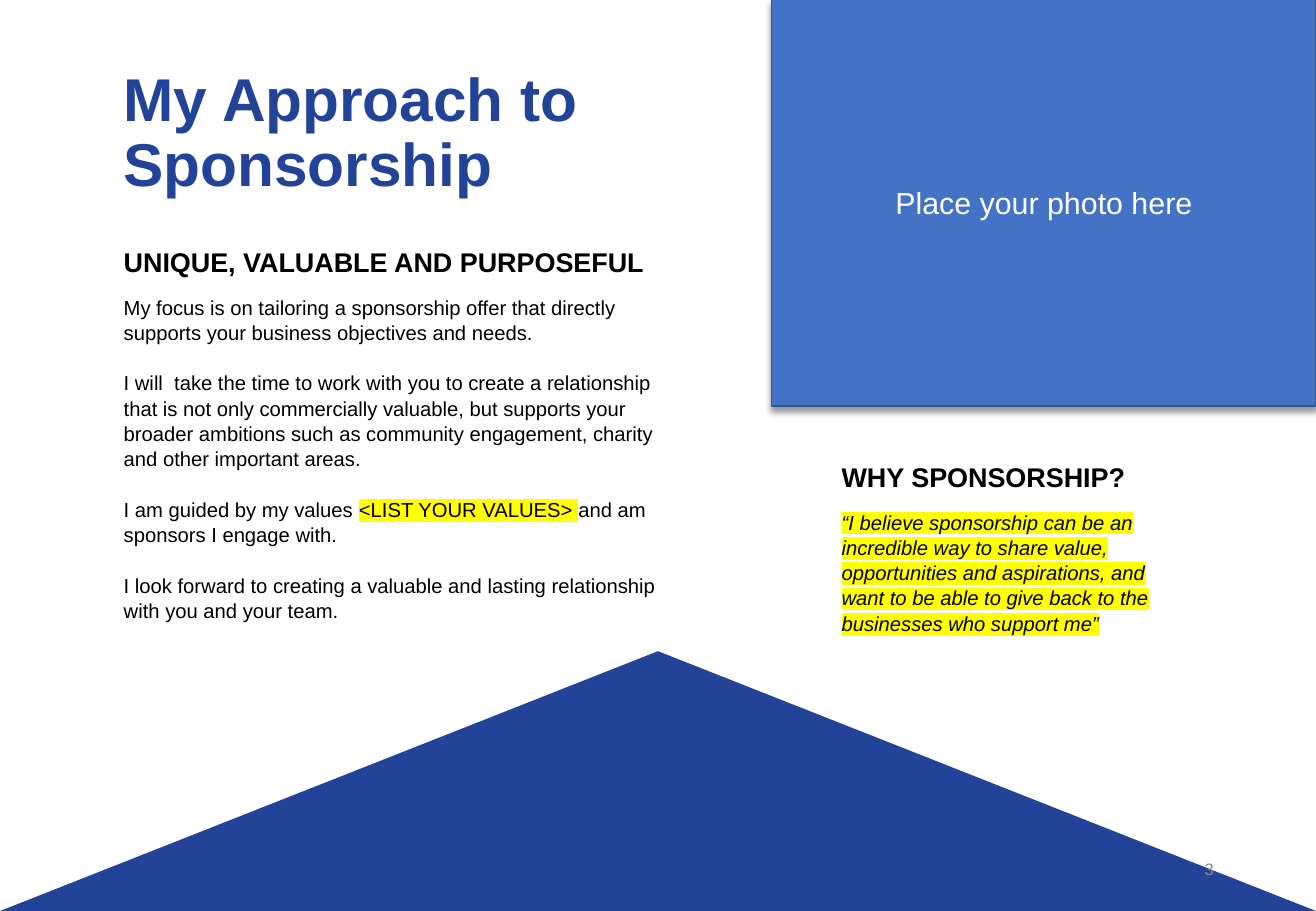
from lxml.etree import SubElement
from pptx import Presentation
from pptx.dml.color import RGBColor
from pptx.enum.shapes import MSO_SHAPE
from pptx.enum.text import MSO_ANCHOR, MSO_AUTO_SIZE, PP_ALIGN
from pptx.oxml import parse_xml
from pptx.oxml.ns import nsdecls, qn
from pptx.util import Pt

WIDE, HIGH = 780, 540
NAVY, BLACK, WHITE, YELLOW = "234398", "000000", "FFFFFF", "FFFF00"
LEFT, RIGHT = 66.24, 491.76

GROW = {"word_wrap": True, "auto_size": MSO_AUTO_SIZE.SHAPE_TO_FIT_TEXT}
MID = {"word_wrap": True, "vertical_anchor": MSO_ANCHOR.MIDDLE}

TITLE = {"size": Pt(35.8), "bold": True}
HEAD = {"size": Pt(16), "bold": True}
BODY = {"size": Pt(12)}
QUOTE = {"size": Pt(12), "italic": True}
NOTE = {"size": Pt(9.8)}
LABEL = {"size": Pt(18)}

TIGHT = {"line_spacing": 0.9, "space_after": Pt(6)}
LOOSE = {"line_spacing": 1.5, "space_before": Pt(6), "space_after": Pt(6)}
FIXED = {"line_spacing": Pt(15)}
GAP = {"line_spacing": Pt(15), "space_before": Pt(15)}

FOCUS = [
    ["My focus is on tailoring a sponsorship offer that directly supports "
     "your business objectives and needs."],
    ["I will  take the time to work with you to create a relationship that is "
     "not only commercially valuable, but supports your broader ambitions "
     "such as community engagement, charity and other important areas."],
    ["I am guided by my values ", ("<LIST YOUR VALUES> ", YELLOW),
     "and am sponsors I engage with."],
    ["I look forward to creating a valuable and lasting relationship with "
     "you and your team."],
]
BELIEF = ("“I believe sponsorship can be an incredible way to share value, "
          "opportunities and aspirations, and want to be able to give back "
          "to the businesses who support me”")


def color(code):
    return RGBColor.from_string(code)


def apply(item, values):
    for name, value in values.items():
        setattr(item, name, value)


def paint(shape, code):
    shape.fill.solid()
    shape.fill.fore_color.rgb = color(code)


def mark(run, code):
    fill = run.font._element.find(qn("a:solidFill"))
    light = parse_xml(f'<a:highlight {nsdecls("a")}/>')
    SubElement(light, qn("a:srgbClr"), val=code)
    fill.addnext(light)


def add_run(para, part, style, code):
    text, light = part if isinstance(part, tuple) else (part, None)
    run = para.add_run()
    run.text = text
    apply(run.font, {**style, "name": "Arial"})
    run.font.color.rgb = color(code)
    if light:
        mark(run, light)


def write(shape, paras, style, code, first, later=None, frame=GROW):
    body = shape.text_frame
    apply(body, frame)
    for order, parts in enumerate(paras):
        para = body.add_paragraph() if order else body.paragraphs[0]
        apply(para, later if order and later else first)
        for part in parts:
            add_run(para, part, style, code)


def add_box(slide, area):
    return slide.shapes.add_textbox(*map(Pt, area))


def add_block(slide, kind, area, code):
    block = slide.shapes.add_shape(kind, *map(Pt, area))
    block.shadow.inherit = False
    paint(block, code)
    block.line.fill.background()
    return block


def add_shade(shape):
    effects = shape._element.spPr.find(qn("a:effectLst"))
    shade = SubElement(effects, qn("a:outerShdw"), blurRad=str(Pt(4)),
                       dist=str(Pt(3)), dir="5400000", rotWithShape="0")
    tint = SubElement(shade, qn("a:srgbClr"), val=BLACK)
    SubElement(tint, qn("a:alpha"), val="40000")


def add_photo(slide):
    photo = add_block(slide, MSO_SHAPE.RECTANGLE, (457.2, -0.5, 323, 241.2), "4472C4")
    photo.line.color.rgb = color("325491")
    photo.line.width = Pt(1)
    add_shade(photo)
    write(photo, [["Place your photo here"]], LABEL, WHITE,
          {"alignment": PP_ALIGN.CENTER}, frame=MID)


def main():
    deck = Presentation()
    apply(deck, {"slide_width": Pt(WIDE), "slide_height": Pt(HIGH)})
    slide = deck.slides.add_slide(deck.slide_layouts[6])

    add_block(slide, MSO_SHAPE.ISOSCELES_TRIANGLE, (0, 386, WIDE, HIGH - 386), NAVY)
    page = add_box(slide, (550.8, 500.4, 175.7, 28.8))
    write(page, [["3"]], NOTE, "8C8C8C", {"alignment": PP_ALIGN.RIGHT}, frame=MID)

    for text, area in (
        ("UNIQUE, VALUABLE AND PURPOSEFUL", (LEFT, 132.5, 491.8, 32.4)),
        ("WHY SPONSORSHIP?", (RIGHT, 259.9, 444.2, 32.4)),
    ):
        write(add_box(slide, area), [[text]], HEAD, BLACK, LOOSE)

    focus = add_box(slide, (LEFT, 170.6, 339.8, 203))
    write(focus, FOCUS, BODY, BLACK, FIXED, GAP)

    title = add_box(slide, (LEFT, 37.4, 455.8, 85))
    paint(title, WHITE)
    write(title, [["My Approach to Sponsorship"]], TITLE, NAVY, TIGHT)

    belief = add_box(slide, (RIGHT, 298.1, 200.9, 96.5))
    write(belief, [[(BELIEF, YELLOW)]], QUOTE, BLACK, FIXED)

    add_photo(slide)
    deck.save("out.pptx")


if __name__ == "__main__":
    main()
